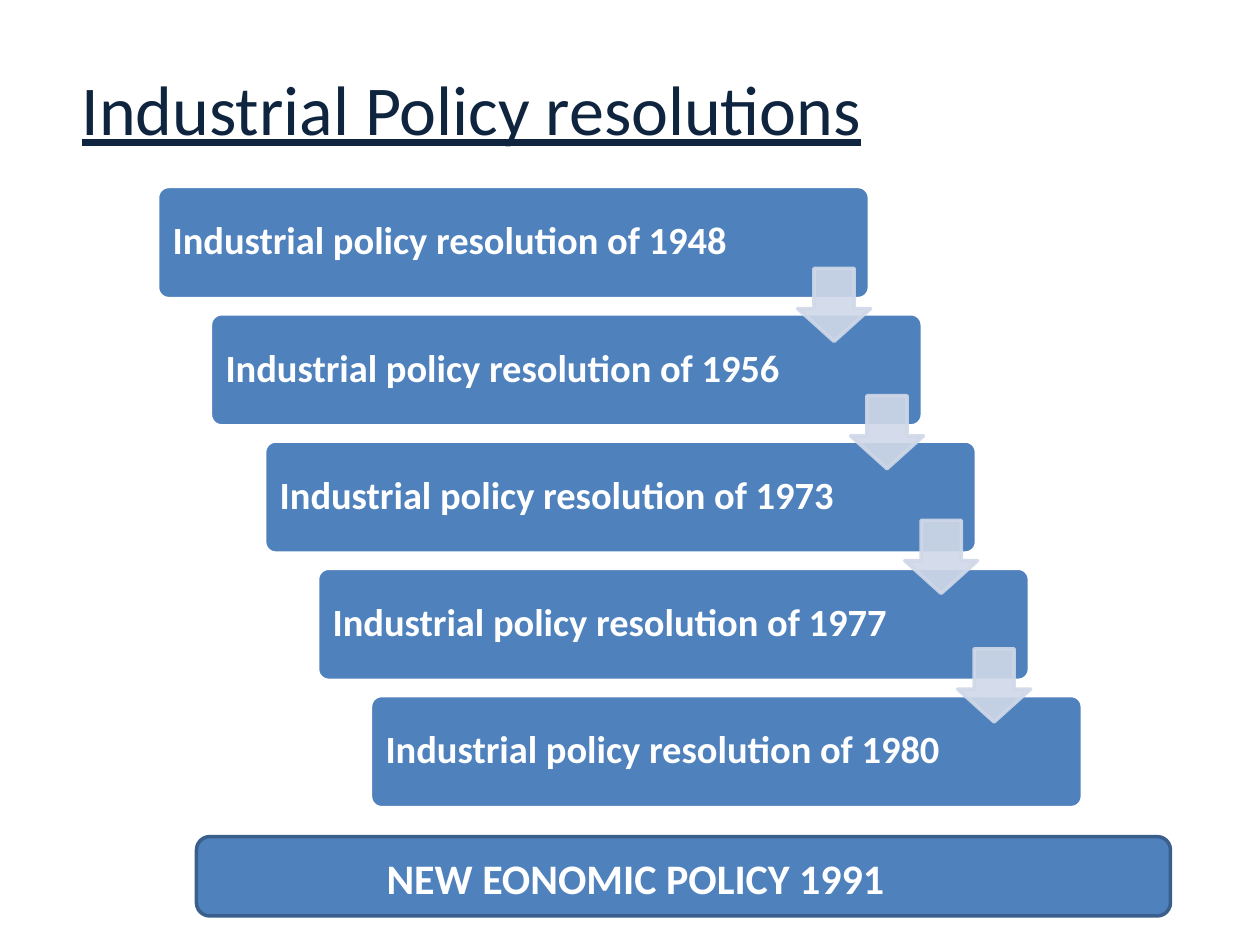
from lxml import etree
from pptx import Presentation
from pptx.dml.color import RGBColor
from pptx.enum.shapes import MSO_SHAPE
from pptx.enum.text import MSO_ANCHOR
from pptx.oxml.ns import qn
from pptx.util import Emu, Pt

ROUNDED = MSO_SHAPE.ROUNDED_RECTANGLE
DOWN_ARROW = MSO_SHAPE.DOWN_ARROW
MIDDLE = MSO_ANCHOR.MIDDLE

PX = 9144  # 100 px to the inch
FONT = "Calibri"
BLUE, DARK_BLUE, PALE_BLUE = "4F81BD", "3A5F8C", "D0D8E8"
NAVY, WHITE = "0F243E", "FFFFFF"

YEARS = [1948, 1956, 1973, 1977, 1980]
STEP_X, STEP_Y = 42.25, 101
ARROW_TOPS = [213, 314, 413, 515]


def px(*lengths):
    return [Emu(length * PX) for length in lengths]


def color(hex_string):
    return RGBColor.from_string(hex_string)


def add_block(slide, preset, place, fill, line, adjustments=()):
    block = slide.shapes.add_shape(preset, *px(*place))
    block.shadow.inherit = False
    block.fill.solid()
    block.fill.fore_color.rgb = color(fill)
    block.line.color.rgb = color(line)
    block.line.width = Pt(2)
    for index, value in enumerate(adjustments):
        block.adjustments[index] = value
    return block


def set_opacity(shape, percent):
    """Apply one opacity to both the fill and the line."""
    for tint in shape._element.spPr.iter(qn("a:srgbClr")):
        etree.SubElement(tint, qn("a:alpha"), val=str(percent * 1000))


def add_text(slide, place, text, size, ink, bold=False, underline=False):
    box = slide.shapes.add_textbox(*px(*place))
    box.text_frame.word_wrap = True
    para = box.text_frame.paragraphs[0]
    para.text = text
    para.font.name = FONT
    para.font.size = Pt(size)
    para.font.color.rgb = color(ink)
    para.font.bold = bold
    para.font.underline = underline
    return box


def add_step(slide, left, top, year):
    add_block(slide, ROUNDED, (left, top, 565, 89), BLUE, WHITE, [0.1])
    label = add_text(slide, (left + 3, top + 3, 460, 83),
                     f"Industrial policy resolution of {year}", 22, WHITE, bold=True)
    frame = label.text_frame
    frame.vertical_anchor = MIDDLE
    frame.margin_left, frame.margin_top, frame.margin_right, frame.margin_bottom = px(9, 9, 9, 9)
    frame.paragraphs[0].line_spacing = 0.9


def add_arrow(slide, left, top):
    arrow = add_block(slide, DOWN_ARROW, (left, top, 58, 58),
                      PALE_BLUE, PALE_BLUE, [0.55, 0.45])
    set_opacity(arrow, 90)


def main():
    deck = Presentation()
    deck.slide_width, deck.slide_height = px(1000, 750)
    slide = deck.slides.add_slide(deck.slide_layouts[6])

    for index, year in enumerate(YEARS):
        add_step(slide, round(125 + index * STEP_X), 148 + index * STEP_Y, year)
    for index, top in enumerate(ARROW_TOPS):
        add_arrow(slide, round(633 + index * STEP_X), top)

    add_text(slide, (55, 47, 945, 77), "Industrial Policy resolutions", 40, NAVY, underline=True)
    add_block(slide, ROUNDED, (156, 664, 773, 63), BLUE, DARK_BLUE)
    add_text(slide, (297, 672, 516, 50), "NEW EONOMIC POLICY 1991", 24, WHITE, bold=True)

    deck.save("out.pptx")


if __name__ == "__main__":
    main()
